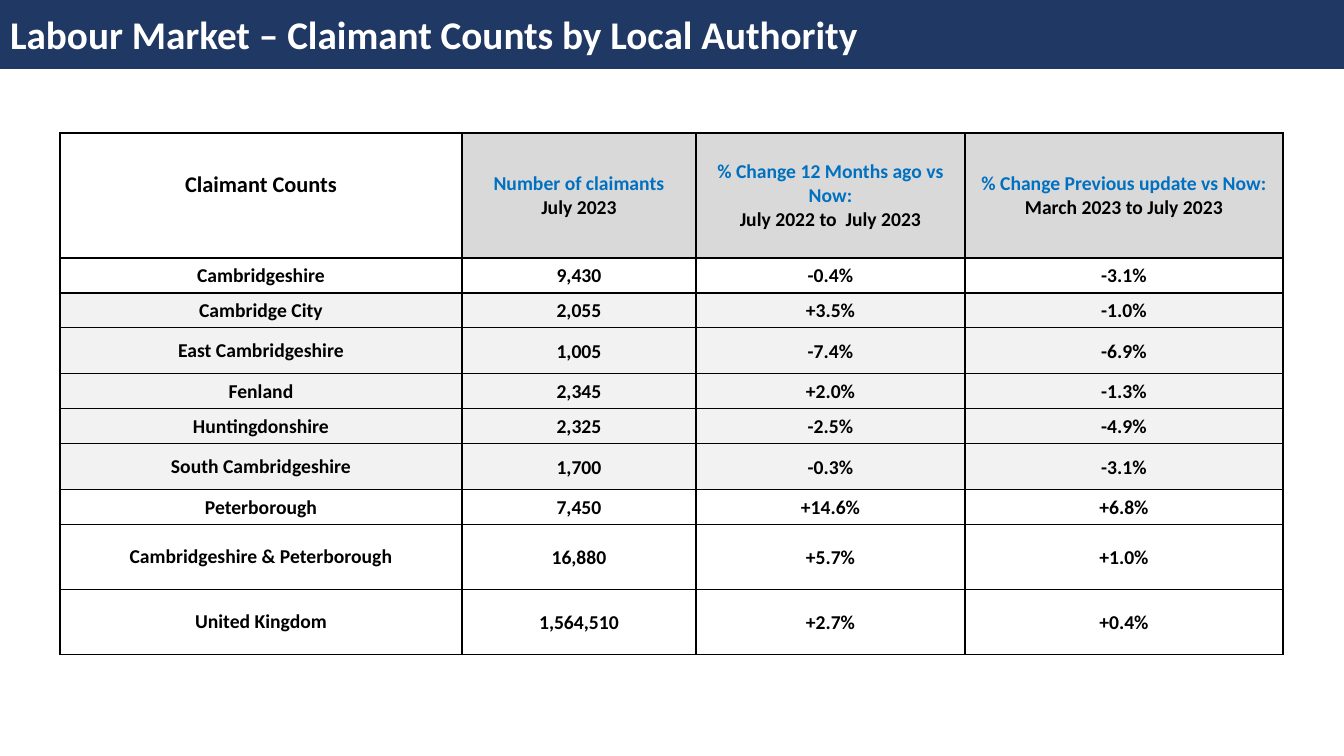
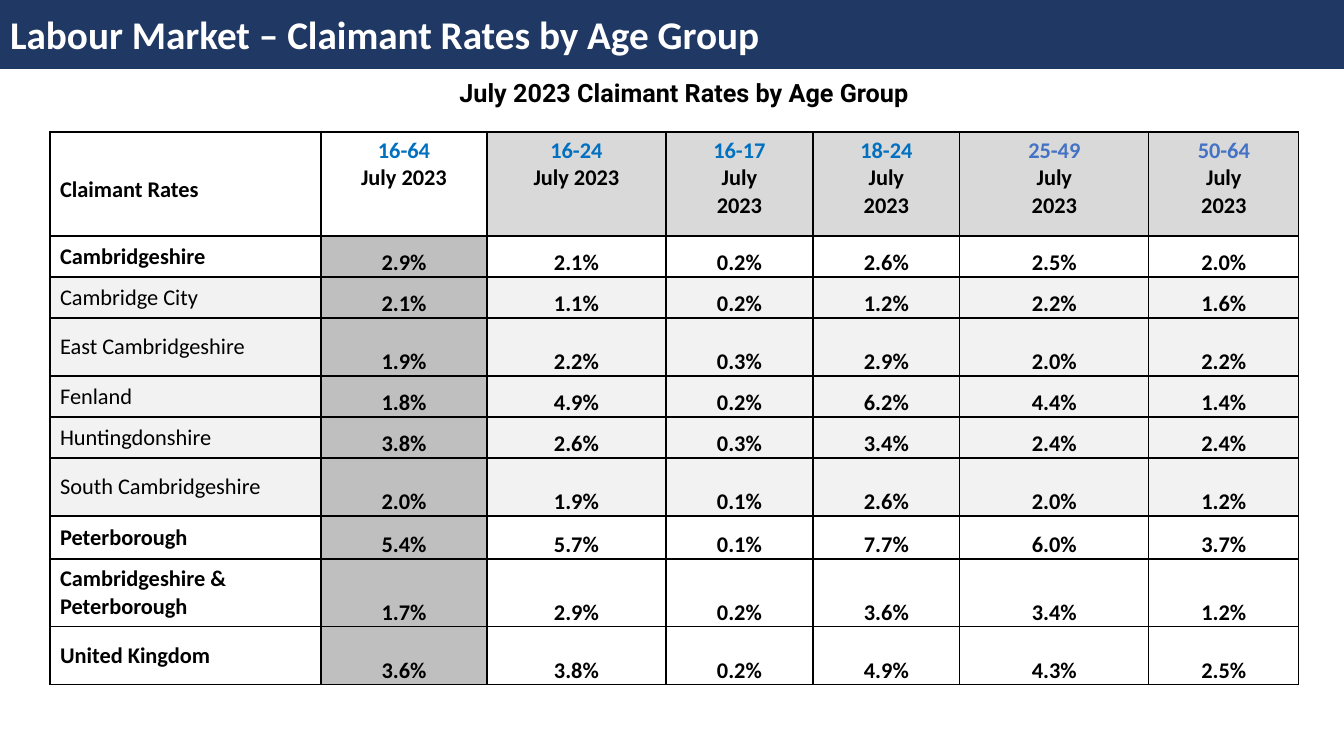
from lxml import etree
from pptx import Presentation
from pptx.dml.color import RGBColor
from pptx.enum.text import MSO_ANCHOR, MSO_AUTO_SIZE, PP_ALIGN
from pptx.oxml.ns import qn
from pptx.util import Pt

PX = 9071  # EMU per pixel
WIDTH, HEIGHT = 1344, 756
LEFT, CENTER = PP_ALIGN.LEFT, PP_ALIGN.CENTER
TOP, MIDDLE, BOTTOM = MSO_ANCHOR.TOP, MSO_ANCHOR.MIDDLE, MSO_ANCHOR.BOTTOM
GROW = MSO_AUTO_SIZE.SHAPE_TO_FIT_TEXT

NAVY, BLUE, INDIGO = "203864", "0070C0", "4472C4"
BLACK, WHITE = "000000", "FFFFFF"
PALE, SILVER, GREY = "F2F2F2", "D9D9D9", "BFBFBF"

DISTRICTS = ["Cambridge City", "East Cambridgeshire", "Fenland",
             "Huntingdonshire", "South Cambridgeshire"]
AREAS = ["Cambridgeshire", *DISTRICTS, "Peterborough",
         "Cambridgeshire & Peterborough", "United Kingdom"]


def rgb(code):
    return RGBColor.from_string(code)


def write(frame, text, size=16, color=BLACK, bold=True, align=CENTER, font="Calibri"):
    """Add one formatted paragraph, using the first one if it is still empty."""
    para = frame.add_paragraph() if frame.text else frame.paragraphs[0]
    para.alignment = align
    span = para.add_run()
    span.text = text
    span.font.name = font
    span.font.size = Pt(size)
    span.font.bold = bold
    span.font.color.rgb = rgb(color)


# Content: each header is its accent colour, then its lines
pages = [
    {
        "title": "Labour Market – Claimant Counts by Local Authority",
        "corner": "Claimant Counts", "corner_anchor": MIDDLE, "corner_gap": 26,
        "left": 60, "top": 133, "size": 14,
        "label_align": CENTER, "header_anchor": MIDDLE, "value_anchor": MIDDLE,
        "columns": [402, 234, 269, 318],
        "rows": [125, 35, 35, 46, 35, 35, 46, 35, 65, 65],
        "headers": [
            (BLUE, "Number of claimants", "July 2023"),
            (BLUE, "% Change 12 Months ago vs Now:", "July 2022 to  July 2023"),
            (BLUE, "% Change Previous update vs Now:", "March 2023 to July 2023"),
        ],
        "values": [
            ["9,430", "-0.4%", "-3.1%"],
            ["2,055", "+3.5%", "-1.0%"],
            ["1,005", "-7.4%", "-6.9%"],
            ["2,345", "+2.0%", "-1.3%"],
            ["2,325", "-2.5%", "-4.9%"],
            ["1,700", "-0.3%", "-3.1%"],
            ["7,450", "+14.6%", "+6.8%"],
            ["16,880", "+5.7%", "+1.0%"],
            ["1,564,510", "+2.7%", "+0.4%"],
        ],
        "subtitle": None, "total_column": None, "light_districts": False,
    },
    {
        "title": "Labour Market – Claimant Rates by Age Group",
        "corner": "Claimant Rates", "corner_anchor": BOTTOM, "corner_gap": 32,
        "left": 50, "top": 132, "size": 16,
        "label_align": LEFT, "header_anchor": TOP, "value_anchor": BOTTOM,
        "columns": [271, 166, 179, 147, 147, 189, 150],
        "rows": [104, 41, 41, 58, 41, 41, 58, 43, 68, 58],
        "headers": [
            (BLUE, "16-64", "July 2023"),
            (BLUE, "16-24", "July 2023"),
            (BLUE, "16-17", "July", "2023"),
            (BLUE, "18-24", "July", "2023"),
            (INDIGO, "25-49", "July", "2023"),
            (INDIGO, "50-64", "July", "2023"),
        ],
        "values": [
            ["2.9%", "2.1%", "0.2%", "2.6%", "2.5%", "2.0%"],
            ["2.1%", "1.1%", "0.2%", "1.2%", "2.2%", "1.6%"],
            ["1.9%", "2.2%", "0.3%", "2.9%", "2.0%", "2.2%"],
            ["1.8%", "4.9%", "0.2%", "6.2%", "4.4%", "1.4%"],
            ["3.8%", "2.6%", "0.3%", "3.4%", "2.4%", "2.4%"],
            ["2.0%", "1.9%", "0.1%", "2.6%", "2.0%", "1.2%"],
            ["5.4%", "5.7%", "0.1%", "7.7%", "6.0%", "3.7%"],
            ["1.7%", "2.9%", "0.2%", "3.6%", "3.4%", "1.2%"],
            ["3.6%", "3.8%", "0.2%", "4.9%", "4.3%", "2.5%"],
        ],
        "subtitle": "July 2023 Claimant Rates by Age Group",
        "total_column": 1, "light_districts": True,
    },
]

deck = Presentation()
deck.slide_width, deck.slide_height = WIDTH * PX, HEIGHT * PX

for content in pages:
    # Title band
    page = deck.slides.add_slide(deck.slide_layouts[5])
    title = page.shapes.title
    title.left, title.top = 0, -2 * PX
    title.width, title.height = WIDTH * PX, 71 * PX
    title.fill.solid()
    title.fill.fore_color.rgb = rgb(NAVY)
    title.text_frame.vertical_anchor = MIDDLE
    write(title.text_frame, content["title"], size=28, color=WHITE, align=LEFT)

    # Subtitle
    if content["subtitle"]:
        box = page.shapes.add_textbox(219 * PX, 72 * PX, 930 * PX, 40 * PX)
        box.text_frame.word_wrap = True
        box.text_frame.auto_size = GROW
        write(box.text_frame, content["subtitle"], size=18, font="Roboto")

    # Table grid
    columns, rows = content["columns"], content["rows"]
    table = page.shapes.add_table(
        len(rows), len(columns), content["left"] * PX, content["top"] * PX,
        sum(columns) * PX, sum(rows) * PX).table
    table.first_row = table.horz_banding = False
    for column, width in zip(table.columns, columns):
        column.width = width * PX
    for row, height in zip(table.rows, rows):
        row.height = height * PX

    # Corner and column headers
    corner = table.cell(0, 0)
    corner.vertical_anchor = content["corner_anchor"]
    corner.margin_bottom = content["corner_gap"] * PX
    write(corner.text_frame, content["corner"], align=content["label_align"])
    for c, (accent, heading, *dates) in enumerate(content["headers"], 1):
        cell = table.cell(0, c)
        cell.vertical_anchor = content["header_anchor"]
        write(cell.text_frame, heading, size=content["size"], color=accent)
        for date in dates:
            write(cell.text_frame, date, size=content["size"])

    # Area labels and values
    for r, (area, values) in enumerate(zip(AREAS, content["values"]), 1):
        label = table.cell(r, 0)
        label.vertical_anchor = MIDDLE
        light = content["light_districts"] and area in DISTRICTS
        write(label.text_frame, area, size=content["size"], bold=not light,
              align=content["label_align"])
        for c, value in enumerate(values, 1):
            cell = table.cell(r, c)
            cell.vertical_anchor = content["value_anchor"]
            cell.margin_left = cell.margin_right = cell.margin_top = PX
            cell.margin_bottom = 0
            write(cell.text_frame, value, size=content["size"])

    # Borders and fills
    for r in range(len(rows)):
        for c in range(len(columns)):
            cell = table.cell(r, c)
            properties = cell._tc.get_or_add_tcPr()
            for side in ("a:lnL", "a:lnR", "a:lnT", "a:lnB"):
                line = etree.SubElement(properties, qn(side), w=str(Pt(1)))
                solid = etree.SubElement(line, qn("a:solidFill"))
                etree.SubElement(solid, qn("a:srgbClr"), val=BLACK)
            if c == content["total_column"]:
                shade = GREY if r else WHITE
            elif r == 0:
                shade = SILVER if c else WHITE
            else:
                shade = PALE if AREAS[r - 1] in DISTRICTS else WHITE
            cell.fill.solid()
            cell.fill.fore_color.rgb = rgb(shade)

deck.save("out.pptx")
